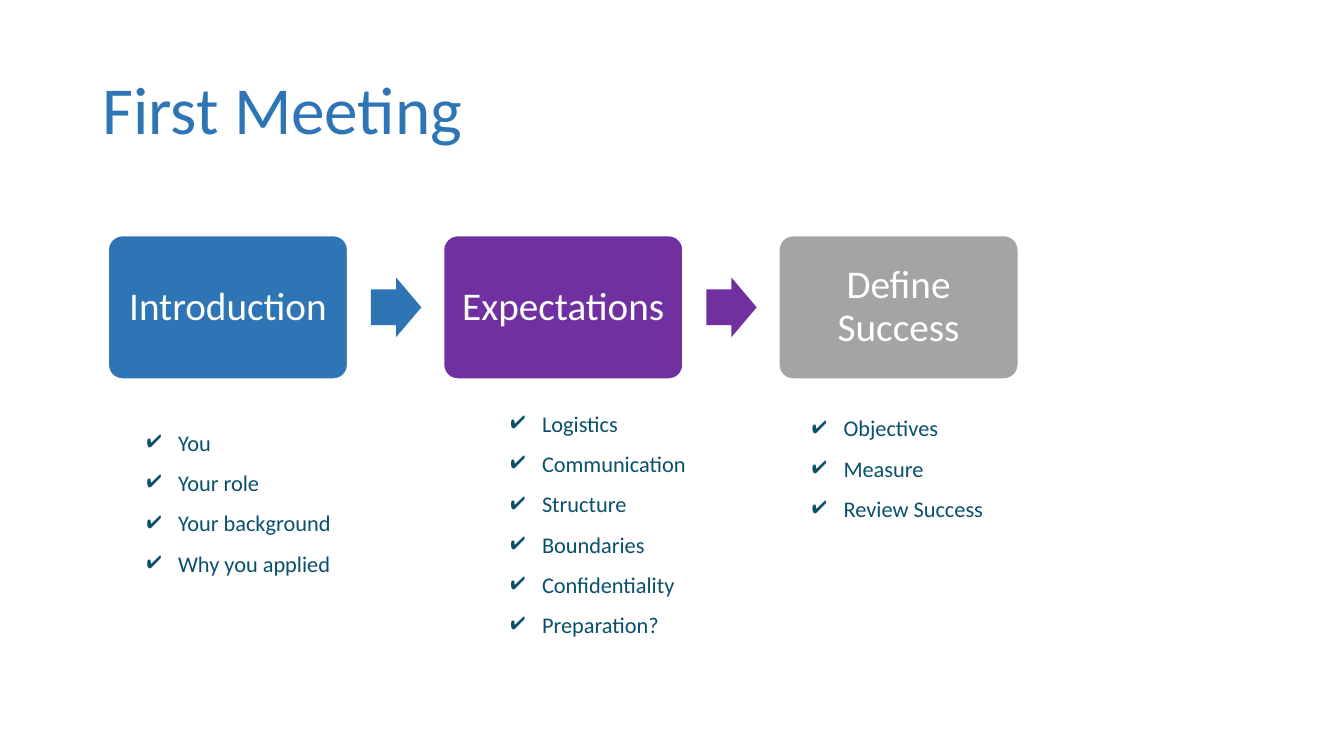
from lxml import etree
from pptx import Presentation
from pptx.dml.color import RGBColor
from pptx.enum.shapes import MSO_SHAPE
from pptx.enum.text import MSO_ANCHOR, PP_ALIGN
from pptx.oxml.ns import qn
from pptx.util import Cm, Pt

ROUND = MSO_SHAPE.ROUNDED_RECTANGLE
ARROW = MSO_SHAPE.RIGHT_ARROW
TOP, MIDDLE = MSO_ANCHOR.TOP, MSO_ANCHOR.MIDDLE
LEFT, CENTER = PP_ALIGN.LEFT, PP_ALIGN.CENTER
BLUE, PURPLE, GRAY = "2E75B5", "7030A0", "A4A4A4"
TEAL, WHITE = "09506C", "FFFFFF"

STEPS = [
    ("Introduction", BLUE, (3.45, 10.34, 5.72, 7.44),
     ["You", "Your role", "Your background", "Why you applied"]),
    ("Expectations", PURPLE, (12.62, 9.86, 5.72, 9.19),
     ["Logistics", "Communication", "Structure", "Boundaries",
      "Confidentiality", "Preparation?"]),
    ("Define Success", GRAY, (20.22, 9.98, 5.72, 5.38),
     ["Objectives", "Measure", "Review Success"]),
]


def color(code):
    return RGBColor.from_string(code)


def add_check(para, code):
    props = para._p.get_or_add_pPr()
    props.set("marL", str(Cm(0.79)))
    props.set("indent", str(-Cm(0.79)))
    tint = etree.SubElement(props, qn("a:buClr"))
    etree.SubElement(tint, qn("a:srgbClr"), val=code)
    etree.SubElement(props, qn("a:buChar"), char="✔")


def write(shape, lines, size, code, anchor=MIDDLE, align=LEFT,
          space=0.9, inset=(0.25, 0.13), check=False):
    frame = shape.text_frame
    frame.word_wrap = True
    frame.vertical_anchor = anchor
    frame.margin_left = frame.margin_right = Cm(inset[0])
    frame.margin_top = frame.margin_bottom = Cm(inset[1])
    for i, line in enumerate(lines):
        para = frame.add_paragraph() if i else frame.paragraphs[0]
        if check:
            add_check(para, code)
        para.alignment = align
        para.line_spacing = space
        run = para.add_run()
        run.text = line
        run.font.name = "Calibri"
        run.font.size = Pt(size)
        run.font.color.rgb = color(code)


def add_text(slide, box, lines, size, code, **style):
    shape = slide.shapes.add_textbox(*map(Cm, box))
    write(shape, lines, size, code, **style)


def add_block(slide, kind, box, fill, *ratios):
    shape = slide.shapes.add_shape(kind, *map(Cm, box))
    shape.shadow.inherit = False
    shape.fill.solid()
    shape.fill.fore_color.rgb = color(fill)
    shape.line.fill.background()
    for i, ratio in enumerate(ratios):
        shape.adjustments[i] = ratio
    return shape


def add_step(slide, box, label, fill, arrow):
    x, y, width, height = box
    card = add_block(slide, ROUND, box, fill, 0.1)
    card.line.color.rgb = color(WHITE)
    card.line.width = Pt(1.5)
    write(card, [label], 28, WHITE, align=CENTER, inset=(0.3, 0.3))
    if arrow:
        tall = 1.5
        spot = (x + width + 0.58, y + (height - tall) / 2, 1.27, tall)
        add_block(slide, ARROW, spot, fill, 0.6, 0.5)


def add_flow(slide, box):
    x, y, width, height = box
    card = 6.05
    pitch = (width - card) / (len(STEPS) - 1)
    for i, (label, fill, area, items) in enumerate(STEPS):
        add_step(slide, (x + i * pitch, y, card, height), label, fill,
                 i < len(STEPS) - 1)
        add_text(slide, area, items, 16, TEAL, anchor=TOP, space=1.5,
                 check=True)


def main():
    deck = Presentation()
    deck.slide_width, deck.slide_height = Cm(33.87), Cm(19.05)
    slide = deck.slides.add_slide(deck.slide_layouts[6])
    add_text(slide, (2.33, 1.01, 29.21, 3.68), ["First Meeting"], 48, BLUE)
    add_flow(slide, (2.72, 5.93, 22.95, 3.63))
    deck.save("out.pptx")


if __name__ == "__main__":
    main()
